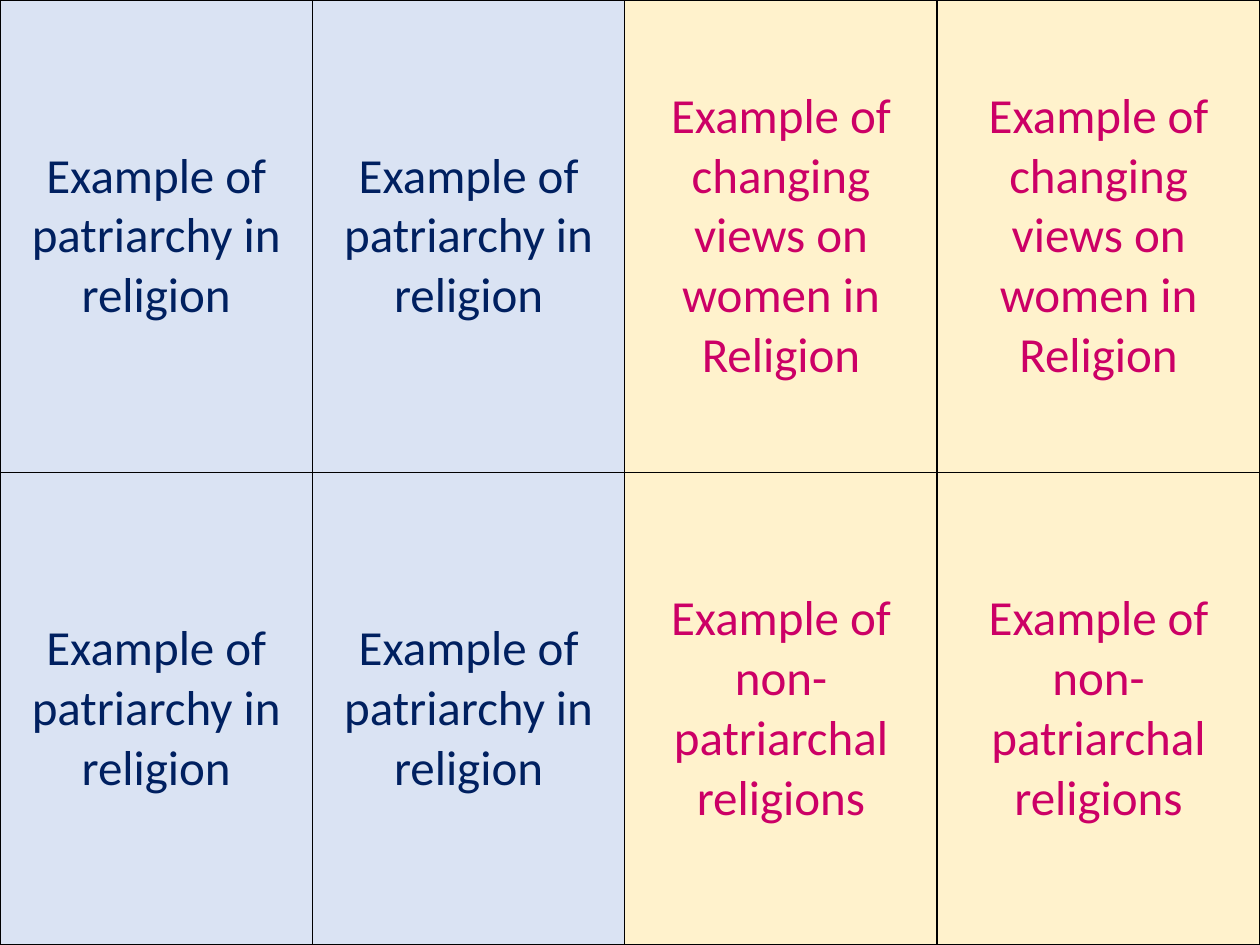
from lxml import etree
from pptx import Presentation
from pptx.dml import color
from pptx.enum import text as tx
from pptx.oxml import ns
from pptx.util import Pt

WIDTHS = [178.5, 178.5, 178.5, 184.5]
HIGH = 270
OLD = "Example of patriarchy in religion"
NEW = [
    "Example of changing views on women in Religion",
    "Example of non-patriarchal religions",
]


def rgb(code):
    """Return the colour for a hex string."""
    return color.RGBColor.from_string(code)


def write(cell, words, size=28, font="Calibri", ink="000000"):
    """Put centred text in a cell."""
    cell.vertical_anchor = tx.MSO_ANCHOR.MIDDLE
    para = cell.text_frame.paragraphs[0]
    para.alignment = tx.PP_ALIGN.CENTER
    run = para.add_run()
    run.text = words
    run.font.size = Pt(size)
    run.font.name = font
    run.font.bold = False
    run.font.color.rgb = rgb(ink)


def edge(cell, ink="000000", wide=1):
    """Draw a line on all four sides of a cell."""
    props = cell._tc.get_or_add_tcPr()
    for spot, side in enumerate(("lnL", "lnR", "lnT", "lnB")):
        line = etree.Element(ns.qn(f"a:{side}"), w=str(Pt(wide)))
        fill = etree.SubElement(line, ns.qn("a:solidFill"))
        etree.SubElement(fill, ns.qn("a:srgbClr"), val=ink)
        props.insert(spot, line)


def card(cell, words, ink, fill):
    """Style one card of the grid."""
    write(cell, words, ink=ink)
    cell.fill.solid()
    cell.fill.fore_color.rgb = rgb(fill)
    edge(cell)


def grid(slide):
    """Add the table of cards."""
    rows, cols = len(NEW), len(WIDTHS)
    frame = slide.shapes.add_table(
        rows, cols, Pt(0), Pt(0), Pt(sum(WIDTHS)), Pt(HIGH * rows)
    )
    table = frame.table
    table.first_row = False
    table.horz_banding = False
    for col, wide in zip(table.columns, WIDTHS):
        col.width = Pt(wide)
    for r, words in enumerate(NEW):
        table.rows[r].height = Pt(HIGH)
        for c in range(cols):
            if c < 2:
                card(table.cell(r, c), OLD, "002060", "DAE3F3")
            else:
                card(table.cell(r, c), words, "CC0066", "FFF2CC")


def main():
    """Build and save the slide."""
    deck = Presentation()
    deck.slide_width = Pt(720)
    deck.slide_height = Pt(540)
    grid(deck.slides.add_slide(deck.slide_layouts[6]))
    deck.save("out.pptx")


if __name__ == "__main__":
    main()
